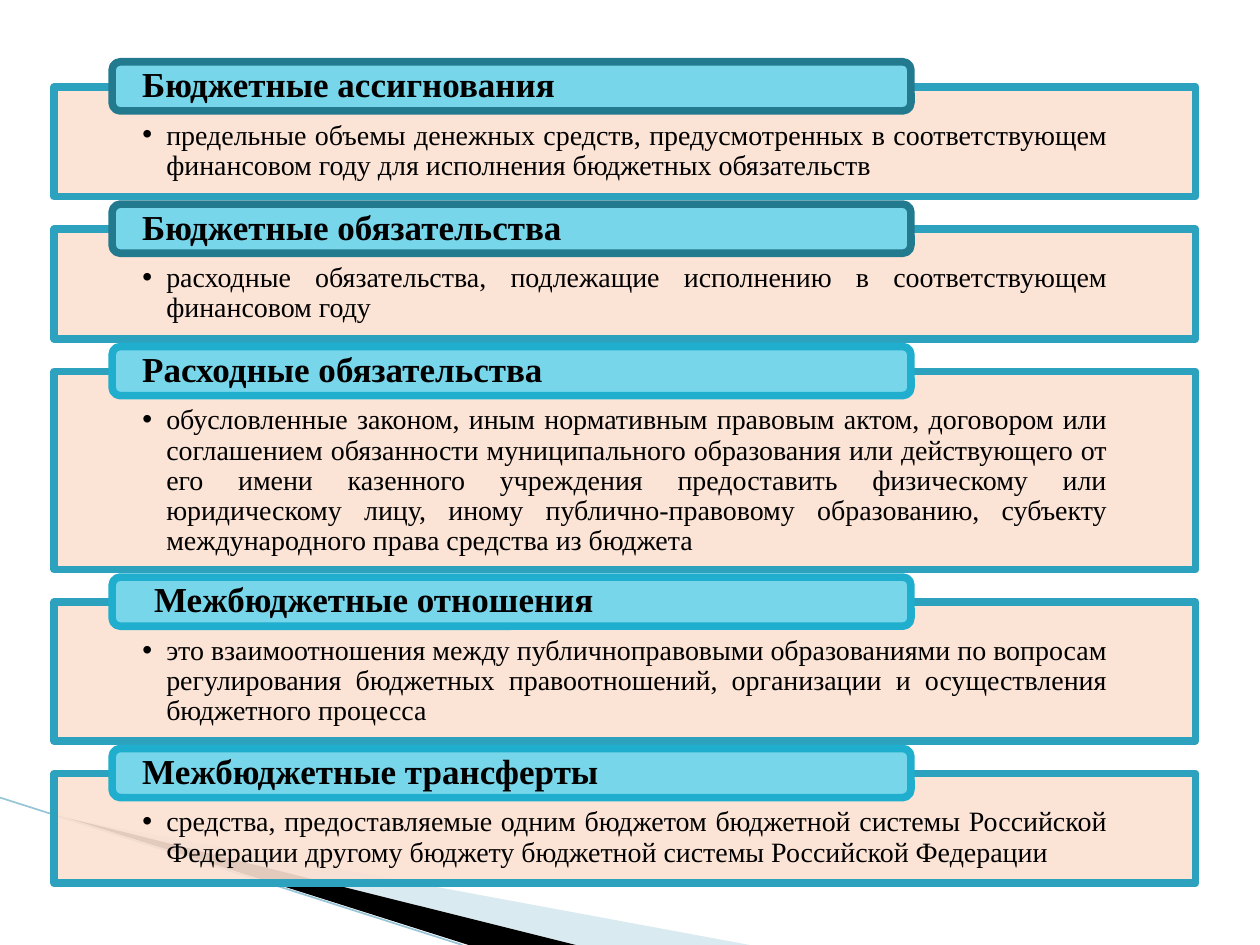
from dataclasses import dataclass

from lxml.etree import SubElement
from pptx import Presentation
from pptx.dml.color import RGBColor
from pptx.enum.shapes import MSO_CONNECTOR as Connector, MSO_SHAPE as Preset
from pptx.enum.text import MSO_ANCHOR as Anchor, PP_ALIGN as Align
from pptx.oxml.ns import qn
from pptx.util import Inches, Pt

SERIF = "Times New Roman"
DARK_EDGE, BRIGHT_EDGE = "227A8F", "1FAECD"
FIRST_TOP, GAP, TAB_RISE = 0.69, 0.26, 0.2
LINE_WIDTH = 4.33


@dataclass
class Term:
    name: str
    meaning: str
    height: float
    edge: str
    lead: str = ""


@dataclass
class Wedge:
    points: list[tuple[float, float]]
    color: str
    opacity: int = 100


TERMS = [
    Term("Бюджетные ассигнования",
         "предельные объемы денежных средств, предусмотренных в соответствующем "
         "финансовом году для исполнения бюджетных обязательств", 0.87, DARK_EDGE),
    Term("Бюджетные обязательства",
         "расходные обязательства, подлежащие исполнению в соответствующем "
         "финансовом году", 0.87, DARK_EDGE),
    Term("Расходные обязательства",
         "обусловленные законом, иным нормативным правовым актом, договором или "
         "соглашением обязанности муниципального образования или действующего от "
         "его имени казенного учреждения предоставить физическому или "
         "юридическому лицу, иному публично-правовому образованию, субъекту "
         "международного права средства из бюджета", 1.57, BRIGHT_EDGE),
    Term("Межбюджетные отношения",
         "это взаимоотношения между публичноправовыми образованиями по "
         "вопросам регулирования бюджетных правоотношений, организации и "
         "осуществления бюджетного процесса", 1.1, BRIGHT_EDGE, " "),
    Term("Межбюджетные трансферты",
         "средства, предоставляемые одним бюджетом бюджетной системы Российской "
         "Федерации другому бюджету бюджетной системы Российской Федерации",
         0.87, BRIGHT_EDGE),
]

WEDGES = [
    Wedge([(0.55, 6.5), (5.95, 7.5), (4.56, 7.5)], "A0CBDC", 40),
    Wedge([(0.53, 6.49), (4.57, 7.5), (3.72, 7.5)], "000000"),
]


def color(value: str) -> RGBColor:
    return RGBColor.from_string(value)


def apply(target, values: dict) -> None:
    for name, value in values.items():
        setattr(target, name, value)


def paint(shape, fill: str, opacity: int = 100, edge: str = "") -> None:
    shape.shadow.inherit = False
    shape.fill.solid()
    shape.fill.fore_color.rgb = color(fill)
    if opacity < 100:
        tint = shape.fill._xPr.find(qn("a:solidFill"))[0]
        SubElement(tint, qn("a:alpha"), val=str(opacity * 1000))
    if edge:
        shape.line.color.rgb = color(edge)
        shape.line.width = Pt(LINE_WIDTH)
    else:
        shape.line.fill.background()


def add_wedge(page, wedge: Wedge) -> None:
    corners = [(Inches(x), Inches(y)) for x, y in wedge.points]
    builder = page.shapes.build_freeform(*corners[0])
    builder.add_line_segments(corners[1:], close=True)
    paint(builder.convert_to_shape(), wedge.color, wedge.opacity)


def add_accent_line(page) -> None:
    line = page.shapes.add_connector(
        Connector.STRAIGHT, Inches(0), Inches(6.33), Inches(3.67), Inches(7.5))
    line.line.color.rgb = color("97C5D8")
    line.line.width = Pt(0.95)
    SubElement(line._element.spPr, qn("a:effectLst"))


def set_frame(box, anchor: Anchor, side: float, top: float, bottom: float):
    apply(box.text_frame, {
        "word_wrap": True,
        "vertical_anchor": anchor,
        "margin_left": Inches(side),
        "margin_right": Inches(side),
        "margin_top": Inches(top),
        "margin_bottom": Inches(bottom),
    })
    para = box.text_frame.paragraphs[0]
    para.line_spacing = 0.9
    return para


def add_span(para, text: str, size: int, bold: bool,
             font: str = SERIF, ink: str = "000000") -> None:
    span = para.add_run()
    span.text = text
    apply(span.font, {"name": font, "size": Pt(size), "bold": bold})
    span.font.color.rgb = color(ink)


def add_bullet(para) -> None:
    props = para._p.get_or_add_pPr()
    props.set("marL", str(Inches(0.19)))
    props.set("indent", str(Inches(-0.19)))
    SubElement(props, qn("a:buFont"), typeface="Arial")
    SubElement(props, qn("a:buChar"), char="•")


def add_panel(page, term: Term, top: float) -> None:
    box = page.shapes.add_shape(
        Preset.RECTANGLE, Inches(0.43), Inches(top), Inches(9.06), Inches(term.height))
    paint(box, "FBE0D1", 90, "2DA2BF")
    para = set_frame(box, Anchor.TOP, 0.7, 0.27, 0.12)
    para.alignment = Align.JUSTIFY
    add_bullet(para)
    add_span(para, term.meaning, 16, False)


def add_tab(page, term: Term, top: float) -> None:
    box = page.shapes.add_shape(
        Preset.ROUNDED_RECTANGLE, Inches(0.89), Inches(top), Inches(6.34), Inches(0.39))
    paint(box, "78D6EA", edge=term.edge)
    para = set_frame(box, Anchor.MIDDLE, 0.22, 0, 0)
    para.alignment = Align.LEFT
    if term.lead:
        add_span(para, term.lead, 20, True, "TeX Gyre Bonum", "FFFFFF")
    add_span(para, term.name, 20, True)


def main() -> None:
    deck = Presentation()
    apply(deck, {"slide_width": Inches(10), "slide_height": Inches(7.5)})
    page = deck.slides.add_slide(deck.slide_layouts[6])
    for wedge in WEDGES:
        add_wedge(page, wedge)
    add_accent_line(page)
    top = FIRST_TOP
    for term in TERMS:
        add_panel(page, term, top)
        add_tab(page, term, top - TAB_RISE)
        top += term.height + GAP
    deck.save("out.pptx")


if __name__ == "__main__":
    main()
